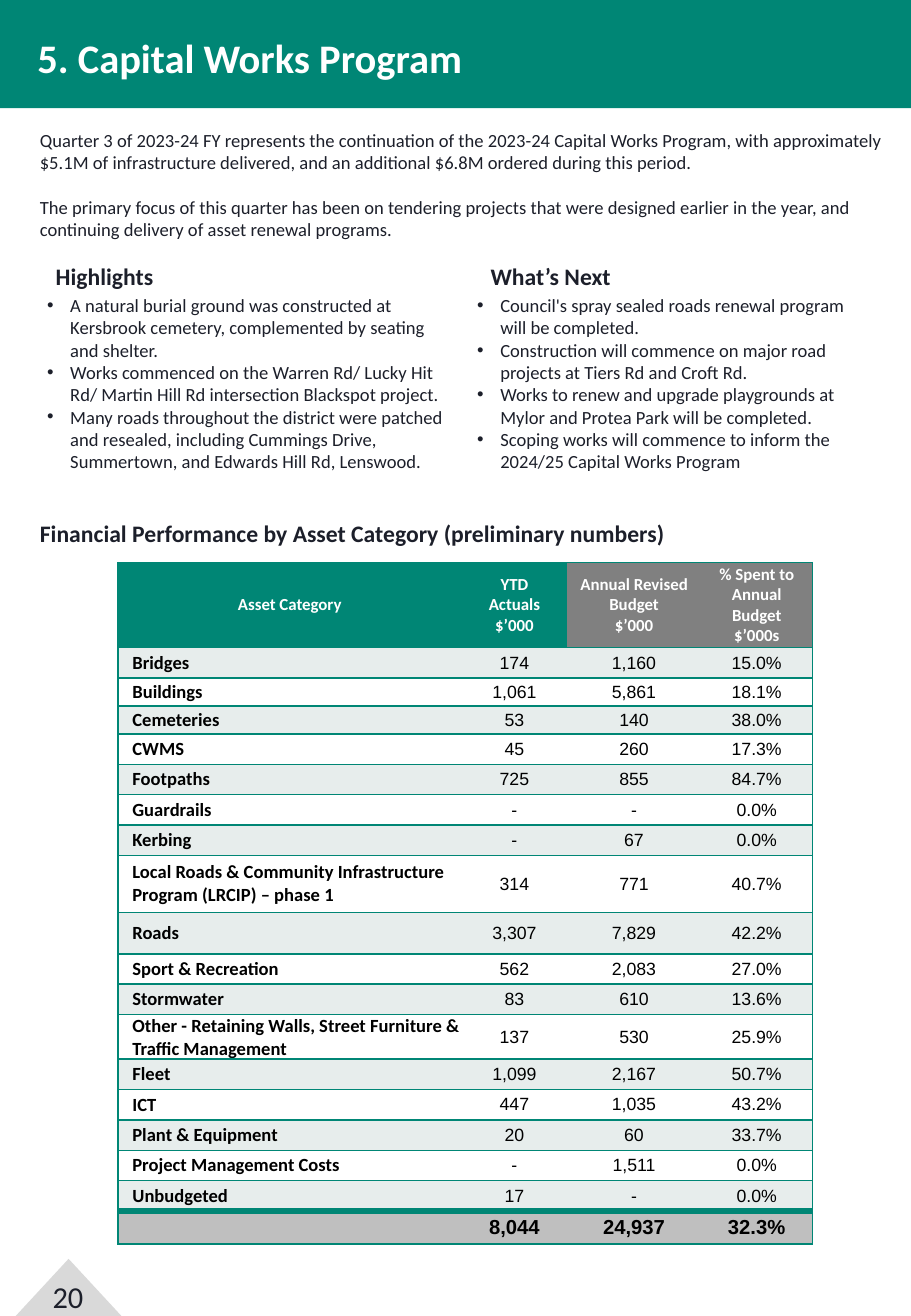
from lxml import etree
from pptx import Presentation
from pptx.dml.color import RGBColor
from pptx.enum.shapes import MSO_SHAPE
from pptx.enum.text import MSO_ANCHOR, MSO_AUTO_SIZE, PP_ALIGN
from pptx.oxml.ns import qn
from pptx.util import Inches, Pt

LEFT, CENTER = PP_ALIGN.LEFT, PP_ALIGN.CENTER
MIDDLE = MSO_ANCHOR.MIDDLE
GROW = MSO_AUTO_SIZE.SHAPE_TO_FIT_TEXT
RECT, PEAK = MSO_SHAPE.RECTANGLE, MSO_SHAPE.ISOSCELES_TRIANGLE

THEME = {
    "green": "008675", "grey": "808080", "ink": "1C1F2A", "black": "000000",
    "white": "FFFFFF", "band": "E7EDEC", "total": "BFBFBF", "corner": "D9D9D9",
    "font": "Calibri", "digits": "Arial",
    "title": 24, "page": 18, "head": 14, "body": 11,
    "label": 10, "number": 10.5, "sum": 12,
}

TITLE = "5. Capital Works Program"
PAGE = "20"
INTRO = [
    "Quarter 3 of 2023-24 FY represents the continuation of the 2023-24 Capital Works Program, "
    "with approximately $5.1M of infrastructure delivered, and an additional $6.8M ordered "
    "during this period.",
    "The primary focus of this quarter has been on tendering projects that were designed earlier "
    "in the year, and continuing delivery of asset renewal programs.",
]
# heading, heading left and width, list left and width, points
COLUMNS = [
    ("Highlights", 0.36, 1.02, 0.29, 3.46, [
        "A natural burial ground was constructed at Kersbrook cemetery, complemented by seating "
        "and shelter.",
        "Works commenced on the Warren Rd/ Lucky Hit Rd/ Martin Hill Rd intersection Blackspot "
        "project.",
        "Many roads throughout the district were patched and resealed, including Cummings Drive, "
        "Summertown, and Edwards Hill Rd, Lenswood.",
    ]),
    ("What’s Next", 3.94, 1.2, 3.83, 3.31, [
        "Council's spray sealed roads renewal program will be completed.",
        "Construction will commence on major road projects at Tiers Rd and Croft Rd.",
        "Works to renew and upgrade playgrounds at Mylor and Protea Park will be completed.",
        "Scoping works will commence to inform the 2024/25 Capital Works Program",
    ]),
]
FINANCE = "Financial Performance by Asset Category (preliminary numbers)"
HEADER = [
    ["Asset Category"],
    ["YTD", "Actuals", "$’000"],
    ["Annual Revised Budget", "$’000"],
    ["% Spent to Annual Budget $’000s"],
]
ASSETS = [
    ("Bridges", "174", "1,160", "15.0%"),
    ("Buildings", "1,061", "5,861", "18.1%"),
    ("Cemeteries", "53", "140", "38.0%"),
    ("CWMS", "45", "260", "17.3%"),
    ("Footpaths", "725", "855", "84.7%"),
    ("Guardrails", "-", "-", "0.0%"),
    ("Kerbing", "-", "67", "0.0%"),
    ("Local Roads & Community Infrastructure Program (LRCIP) – phase 1", "314", "771", "40.7%"),
    ("Roads", "3,307", "7,829", "42.2%"),
    ("Sport & Recreation", "562", "2,083", "27.0%"),
    ("Stormwater", "83", "610", "13.6%"),
    ("Other - Retaining Walls, Street Furniture & Traffic Management", "137", "530", "25.9%"),
    ("Fleet", "1,099", "2,167", "50.7%"),
    ("ICT", "447", "1,035", "43.2%"),
    ("Plant & Equipment", "20", "60", "33.7%"),
    ("Project Management Costs", "-", "1,511", "0.0%"),
    ("Unbudgeted", "17", "-", "0.0%"),
]
TOTAL = ("", "8,044", "24,937", "32.3%")
WIDTHS = [2.83, 0.87, 1.1, 0.92]
ROW = 0.25
TALL = {0: 0.7, 2: 0.23, 3: 0.23, 8: 0.47, 9: 0.34, 12: 0.36, 18: 0.27}


def color(name):
    return RGBColor.from_string(THEME[name])


def write(frame, lines, size="body", ink="ink", font="font", bold=False,
          align=LEFT, gap=0, bullet=False):
    for i, line in enumerate(lines):
        para = frame.paragraphs[0] if i == 0 else frame.add_paragraph()
        para.alignment = align
        if gap and i < len(lines) - 1:
            para.space_after = Pt(gap)
        if bullet:
            props = para._p.get_or_add_pPr()
            props.set("marL", str(Inches(0.19)))
            props.set("indent", str(-Inches(0.19)))
            etree.SubElement(props, qn("a:buFont")).set("typeface", "Arial")
            etree.SubElement(props, qn("a:buChar")).set("char", "•")
        if not line:
            para._p.get_or_add_endParaRPr().set("sz", str(THEME[size] * 100))
            continue
        run = para.add_run()
        run.text = line
        run.font.name = THEME[font]
        run.font.size = Pt(THEME[size])
        run.font.bold = bold
        run.font.color.rgb = color(ink)


def add_text(slide, box, lines, wrap=False, **style):
    frame = slide.shapes.add_textbox(*map(Inches, box)).text_frame
    frame.word_wrap = wrap
    frame.auto_size = GROW
    write(frame, lines, **style)


def add_block(slide, kind, box, fill):
    shape = slide.shapes.add_shape(kind, *map(Inches, box))
    shape.shadow.inherit = False
    shape.fill.solid()
    shape.fill.fore_color.rgb = color(fill)
    shape.line.fill.background()


def set_edges(cell, widths):
    """Draw the left, right, top and bottom edges; a width of 0 hides one."""
    props = cell._tc.get_or_add_tcPr()
    for i, (side, width) in enumerate(zip("LRTB", widths)):
        edge = etree.Element(qn("a:ln" + side), w=str(Pt(width)))
        if width:
            fill = etree.SubElement(edge, qn("a:solidFill"))
            etree.SubElement(fill, qn("a:srgbClr")).set("val", THEME["green"])
        else:
            etree.SubElement(edge, qn("a:noFill"))
        props.insert(i, edge)


def cell_style(row, col, last):
    """Return the fill, side margins and text format of a cell."""
    if row == 0:
        fill = "green" if col < 2 else "grey"
        return fill, (0.07, 0.07), dict(size="label", ink="white", bold=True, align=CENTER)
    if row == last:
        return "total", (0, 0), dict(size="sum", ink="black", font="digits",
                                     bold=True, align=CENTER)
    fill = "band" if row % 2 else "white"
    if col == 0:
        return fill, (0.12, 0), dict(ink="black", bold=True)
    return fill, (0, 0), dict(size="number", ink="black", font="digits", align=CENTER)


def add_finance(slide):
    rows = [HEADER] + [[[item] for item in row] for row in ASSETS + [TOTAL]]
    last, end = len(rows) - 1, len(WIDTHS) - 1
    heights = [TALL.get(r, ROW) for r in range(len(rows))]
    box = map(Inches, (0.97, 4.63, sum(WIDTHS), sum(heights)))
    table = slide.shapes.add_table(len(rows), len(WIDTHS), *box).table
    table.first_row = table.horz_banding = False
    for c, width in enumerate(WIDTHS):
        table.columns[c].width = Inches(width)
    for r, row in enumerate(rows):
        table.rows[r].height = Inches(heights[r])
        for c, lines in enumerate(row):
            cell = table.cell(r, c)
            fill, (left, right), style = cell_style(r, c, last)
            cell.fill.solid()
            cell.fill.fore_color.rgb = color(fill)
            cell.margin_left, cell.margin_right = Inches(left), Inches(right)
            cell.margin_top = cell.margin_bottom = 0
            cell.vertical_anchor = MIDDLE
            write(cell.text_frame, lines, **style)
            top, low = (4 if r == last else 1), (4 if r == last - 1 else 1)
            set_edges(cell, (int(c == 0), int(c == end), top, low))


def main():
    deck = Presentation()
    deck.slide_width, deck.slide_height = Inches(7.5), Inches(10.83)
    slide = deck.slides.add_slide(deck.slide_layouts[6])
    add_block(slide, PEAK, (0.13, 10.36, 0.87, 0.47), "corner")
    add_block(slide, RECT, (0, 0, 7.5, 0.89), "green")
    add_text(slide, (0.31, 10.47, 0.5, 0.4), [PAGE], size="page", align=CENTER)
    add_text(slide, (0.21, 0.22, 3.73, 0.5), [TITLE], size="title", ink="white", bold=True)
    add_text(slide, (0.23, 1.01, 7.14, 1.03), INTRO, wrap=True, gap=13.4)
    for head, left, width, inset, span, points in COLUMNS:
        add_text(slide, (left, 2.11, width, 0.34), [head], size="head", bold=True)
        add_text(slide, (inset, 2.37, span, 1.58), points, wrap=True, bullet=True)
    add_text(slide, (0.23, 4.22, 5.38, 0.34), [FINANCE], size="head", bold=True)
    add_finance(slide)
    deck.save("out.pptx")


if __name__ == "__main__":
    main()
